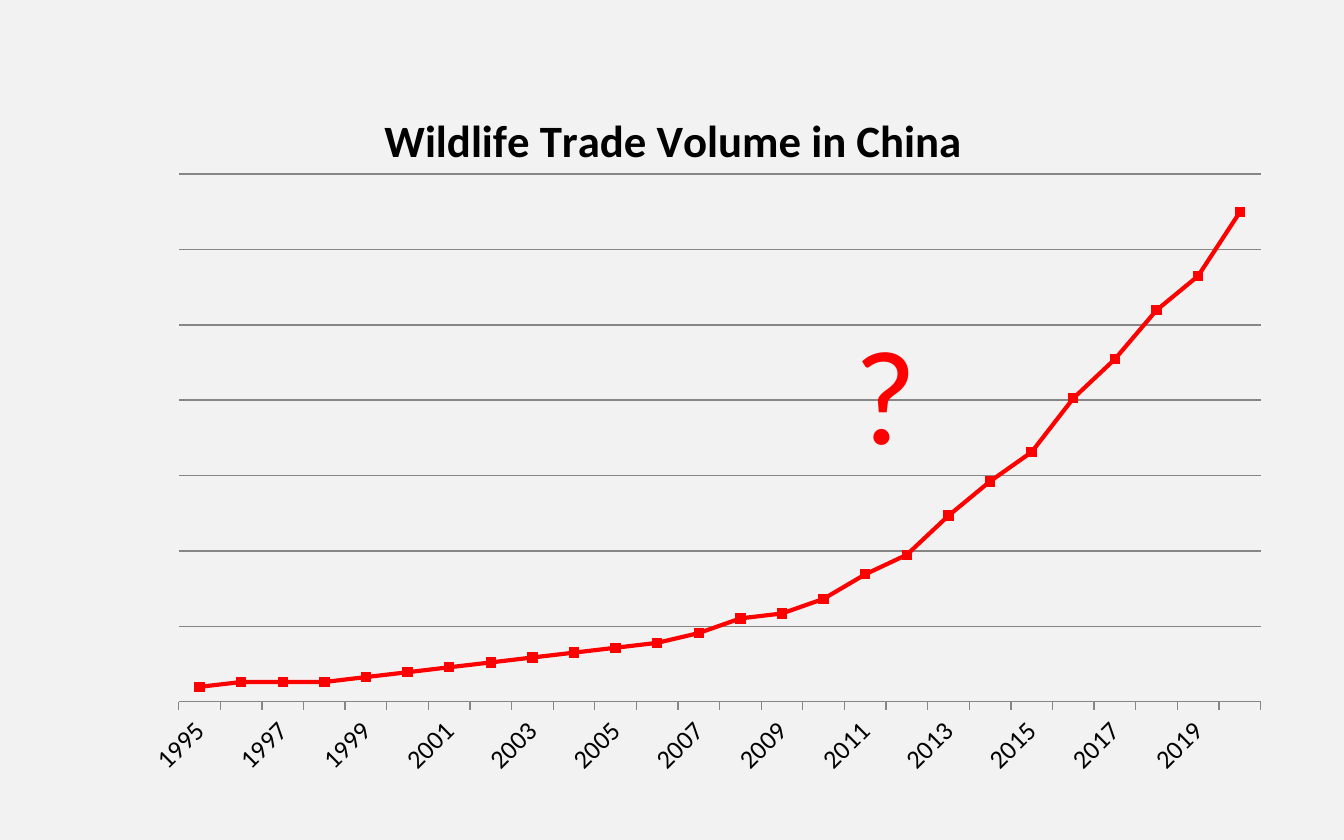
from dataclasses import dataclass

from lxml import etree
from pptx import Presentation
from pptx.chart.data import CategoryChartData
from pptx.dml.color import RGBColor
from pptx.enum.chart import (XL_CHART_TYPE, XL_MARKER_STYLE, XL_TICK_LABEL_POSITION,
                             XL_TICK_MARK)
from pptx.oxml import parse_xml
from pptx.oxml.ns import nsdecls, qn
from pptx.util import Inches, Pt


@dataclass(frozen=True)
class Theme:
    font: str = "Calibri"
    background: RGBColor = RGBColor(0xF2, 0xF2, 0xF2)
    text: RGBColor = RGBColor(0, 0, 0)
    accent: RGBColor = RGBColor(0xFF, 0, 0)
    grid: RGBColor = RGBColor(0x86, 0x86, 0x86)
    title_size: Pt = Pt(24)
    body_size: Pt = Pt(18)
    label_size: Pt = Pt(14)
    question_size: Pt = Pt(72)


THEME = Theme()
YEARS = range(1995, 2021)
TRADE_VOLUME = [3, 4, 4, 4, 5, 6, 7, 8, 9, 10, 11, 12, 14, 17, 18, 21, 26, 30, 38,
                45, 51, 62, 70, 80, 87, 100]
GRID_STEP = 15.4
GRID_COUNT = 7


def format_font(font, **formats):
    font.color.rgb = formats.pop("color", THEME.text)
    for name, value in {"name": THEME.font, **formats}.items():
        setattr(font, name, value)


def format_line(line, color, width):
    line.color.rgb = color
    line.width = width


def manual_layout(**places):
    """Return a c:layout element; target comes first, then modes and fractions."""
    layout = parse_xml(f"<c:layout {nsdecls('c')}><c:manualLayout/></c:layout>")
    for tag, value in places.items():
        etree.SubElement(layout[0], qn(f"c:{tag}")).set("val", str(value))
    return layout


def place_layout(parent, layout, previous):
    for old in parent.findall(qn("c:layout")):
        parent.remove(old)
    if previous is None:
        parent.insert(0, layout)
    else:
        previous.addnext(layout)


def format_title(chart):
    chart.has_title = True
    title = chart.chart_title
    title.include_in_layout = False
    title.text_frame.text = "Wildlife Trade Volume in China"
    format_font(title.text_frame.paragraphs[0].runs[0].font,
                size=THEME.title_size, bold=True)
    title_xml = title._element
    place_layout(title_xml, manual_layout(xMode="edge", yMode="edge", x=0.28, y=0.05),
                 title_xml.find(qn("c:tx")))


def format_axes(chart):
    years, volume = chart.category_axis, chart.value_axis
    years.major_tick_mark = XL_TICK_MARK.OUTSIDE
    years.tick_label_position = XL_TICK_LABEL_POSITION.LOW
    format_line(years.format.line, THEME.grid, Pt(0.75))
    format_font(years.tick_labels.font, size=THEME.label_size)
    years._element.find(qn("c:txPr")).find(qn("a:bodyPr")).set("rot", str(-45 * 60000))
    skip = etree.Element(qn("c:tickLblSkip"))
    skip.set("val", "2")
    years._element.find(qn("c:noMultiLvlLbl")).addprevious(skip)

    axis_formats = {"minimum_scale": 0, "maximum_scale": GRID_STEP * GRID_COUNT,
                    "major_unit": GRID_STEP, "has_major_gridlines": True,
                    "visible": False}
    for name, value in axis_formats.items():
        setattr(volume, name, value)
    format_line(volume.major_gridlines.format.line, THEME.grid, Pt(0.75))


def format_volume_line(chart):
    plot = chart.plots[0]
    plot.vary_by_categories = False
    series = plot.series[0]
    series.smooth = False
    format_line(series.format.line, THEME.accent, Pt(2.25))
    marker = series.marker
    marker.style = XL_MARKER_STYLE.SQUARE
    marker.size = 5
    marker.format.fill.solid()
    marker.format.fill.fore_color.rgb = THEME.accent
    marker.format.line.color.rgb = THEME.accent


def add_trade_chart(slide, left, top, width, height):
    trade = CategoryChartData(number_format="#,##0.0_ ")
    trade.categories = [str(year) for year in YEARS]
    trade.add_series("Series 1", TRADE_VOLUME)
    chart = slide.shapes.add_chart(XL_CHART_TYPE.LINE_MARKERS, left, top, width, height,
                                   trade).chart
    chart.has_legend = False
    format_font(chart.font, size=THEME.body_size)
    format_title(chart)
    format_axes(chart)
    format_volume_line(chart)
    plot_area = chart._chartSpace.find(qn("c:chart")).find(qn("c:plotArea"))
    place_layout(plot_area, manual_layout(layoutTarget="inner", xMode="edge", yMode="edge",
                                          x=0.133, y=0.143, w=0.805, h=0.679), None)


def add_question_mark(slide, left, top, width, height):
    frame = slide.shapes.add_textbox(left, top, width, height).text_frame
    frame.word_wrap = True
    frame.text = "?"
    format_font(frame.paragraphs[0].runs[0].font, size=THEME.question_size,
                color=THEME.accent)


def main():
    deck = Presentation()
    deck.slide_width, deck.slide_height = Inches(10), Inches(6.25)
    slide = deck.slides.add_slide(deck.slide_layouts.get_by_name("Blank"))
    slide.background.fill.solid()
    slide.background.fill.fore_color.rgb = THEME.background
    add_trade_chart(slide, Inches(0), Inches(0.47), Inches(10), Inches(5.78))
    add_question_mark(slide, Inches(6.26), Inches(2.26), Inches(0.87), Inches(1.26))
    deck.save("out.pptx")


if __name__ == "__main__":
    main()
